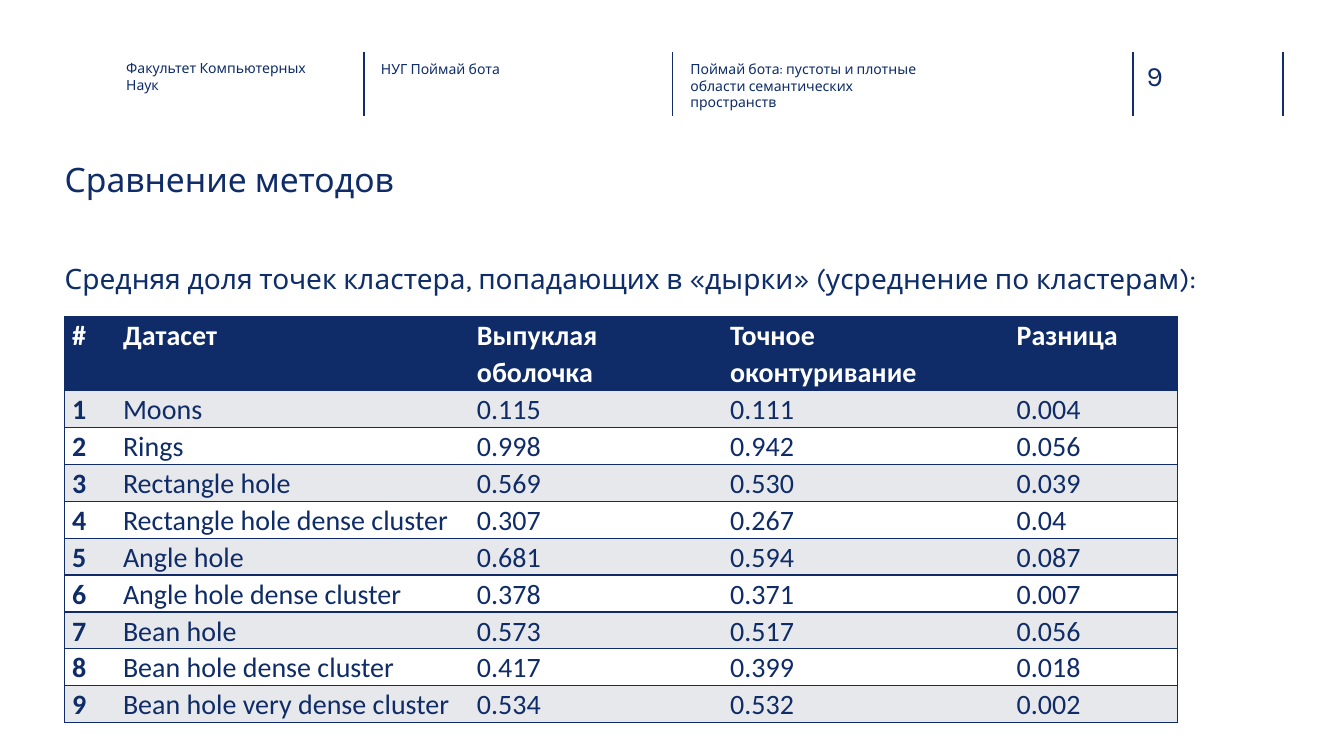
from dataclasses import dataclass

from lxml import etree
from pptx import Presentation
from pptx import util as u
from pptx.dml.color import RGBColor
from pptx.enum import shapes, text
from pptx.oxml import ns

HUES = {"navy": "0F2C68", "ink": "0E2D69", "rule": "102D69",
        "grey": "E7E8EB", "white": "FFFFFF"}
HEAD = ("#", "Датасет", "Выпуклая оболочка", "Точное оконтуривание", "Разница")
ROWS = (
    ("Moons", "0.115", "0.111", "0.004"),
    ("Rings", "0.998", "0.942", "0.056"),
    ("Rectangle hole", "0.569", "0.530", "0.039"),
    ("Rectangle hole dense cluster", "0.307", "0.267", "0.04"),
    ("Angle hole", "0.681", "0.594", "0.087"),
    ("Angle hole dense cluster", "0.378", "0.371", "0.007"),
    ("Bean hole", "0.573", "0.517", "0.056"),
    ("Bean hole dense cluster", "0.417", "0.399", "0.018"),
    ("Bean hole very dense cluster", "0.534", "0.532", "0.002"),
)
WIDTHS = (1.28, 8.92, 6.38, 7.22, 4.24)
RULES = (9.17, 16.94, 28.55, 32.33)
HIGH = 0.93


@dataclass
class Label:
    words: str
    left: float
    top: float
    width: float
    height: float
    size: int = 10
    hue: str = "ink"


TITLE = Label("Сравнение методов", 1.63, 4.01, 30.71, 2.16, 24, "navy")
LABELS = (
    Label("9", 28.9, 1.47, 1.85, 0.86, 20, "rule"),
    Label("Факультет Компьютерных Наук", 3.18, 1.5, 5.28, 1.14, hue="navy"),
    Label("НУГ Поймай бота", 9.6, 1.52, 5.74, 1.14),
    Label("Поймай бота: пустоты и плотные области семантических пространств",
          17.4, 1.52, 5.74, 1.14),
    Label("Средняя доля точек кластера, попадающих в «дырки» "
          "(усреднение по кластерам):", 1.63, 6.6, 30.71, 1.1, 20),
)


def tint(hue: str) -> RGBColor:
    """Give the colour of a named hue."""
    return RGBColor.from_string(HUES[hue])


def write(frame, words: str, *, size: int = 20, hue: str = "navy",
          face: str = "Karla", bold: bool = False, pitch: float = 1.0,
          after: int = 0) -> None:
    """Fill a text frame with one formatted paragraph."""
    frame.word_wrap = True
    para = frame.paragraphs[0]
    para.alignment = text.PP_ALIGN.LEFT
    para.line_spacing = pitch
    para.space_before = u.Pt(0)
    para.space_after = u.Pt(after)
    run = para.add_run()
    run.text = words
    font = run.font
    font.name, font.size, font.bold = face, u.Pt(size), bold
    font.color.rgb = tint(hue)


def place(shape, label: Label) -> None:
    """Set the box and the text of a label."""
    shape.left, shape.top = u.Cm(label.left), u.Cm(label.top)
    shape.width, shape.height = u.Cm(label.width), u.Cm(label.height)
    frame = shape.text_frame
    frame.margin_left = frame.margin_right = u.Cm(0)
    frame.margin_top = frame.margin_bottom = u.Cm(0)
    frame.vertical_anchor = text.MSO_ANCHOR.TOP
    frame.auto_size = text.MSO_AUTO_SIZE.NONE
    write(frame, label.words, size=label.size, hue=label.hue)


def rule(slide, x: float) -> None:
    """Draw an upright header line."""
    line = slide.shapes.add_connector(
        shapes.MSO_CONNECTOR.STRAIGHT, u.Cm(x), u.Cm(1.3), u.Cm(x), u.Cm(2.92))
    line.line.color.rgb = tint("rule")
    line.line.width = u.Pt(1)
    etree.SubElement(line._element.spPr, ns.qn("a:effectLst"))


def edge(cell, side: str, shown: bool) -> None:
    """Draw or hide one border of a cell."""
    props = cell._tc.get_or_add_tcPr()
    line = etree.SubElement(props, ns.qn(f"a:ln{side}"), w=str(u.Pt(1)))
    if shown:
        fill = etree.SubElement(line, ns.qn("a:solidFill"))
        etree.SubElement(fill, ns.qn("a:srgbClr"), val=HUES["navy"])
    else:
        etree.SubElement(line, ns.qn("a:noFill"))


def grid(slide) -> None:
    """Build the table of results."""
    data = [HEAD] + [(str(i), *row) for i, row in enumerate(ROWS, 1)]
    table = slide.shapes.add_table(
        len(data), len(HEAD), u.Cm(1.63), u.Cm(7.98),
        u.Cm(sum(WIDTHS)), u.Cm(HIGH * (len(data) + 1))).table
    table.horz_banding = False
    for col, width in zip(table.columns, WIDTHS):
        col.width = u.Cm(width)
    for r, row in enumerate(data):
        table.rows[r].height = u.Cm(HIGH if r else 2 * HIGH)
        back = ("grey" if r % 2 else "white") if r else "navy"
        for c, words in enumerate(row):
            cell = table.cell(r, c)
            cell.margin_left = cell.margin_right = u.Cm(0.19)
            cell.margin_top = cell.margin_bottom = u.Cm(0)
            edges = {"L": c == 0, "R": c == len(HEAD) - 1, "T": True, "B": True}
            for side, shown in edges.items():
                edge(cell, side, shown)
            cell.fill.solid()
            cell.fill.fore_color.rgb = tint(back)
            write(cell.text_frame, words, hue="navy" if r else "white",
                  face="Calibri", bold=r == 0 or c == 0, pitch=1.07, after=8)


def main() -> None:
    """Build and save the slide."""
    deck = Presentation()
    deck.slide_width, deck.slide_height = u.Cm(33.87), u.Cm(19.05)
    slide = deck.slides.add_slide(deck.slide_layouts[5])
    for x in RULES:
        rule(slide, x)
    place(slide.shapes.title, TITLE)
    for label in LABELS:
        place(slide.shapes.add_textbox(0, 0, 0, 0), label)
    grid(slide)
    deck.save("out.pptx")


if __name__ == "__main__":
    main()
